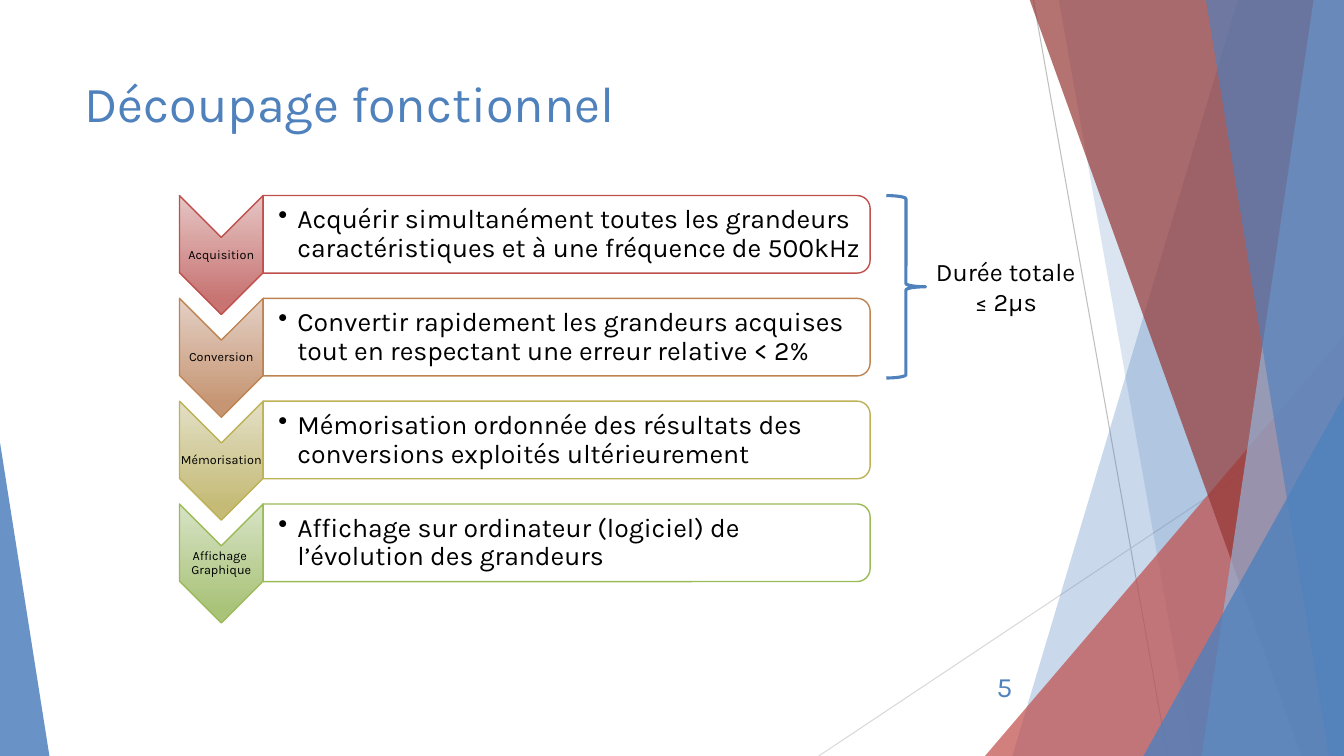
from lxml import etree
from pptx import Presentation
from pptx.dml.color import RGBColor
from pptx.enum import shapes, text
from pptx.oxml import ns
from pptx.util import Inches, Pt

BLUE = RGBColor(0x4F, 0x81, 0xBD)
PALE = RGBColor(0x95, 0xB3, 0xD7)
RED = RGBColor(0xC0, 0x50, 0x4D)
DARK = RGBColor(0x95, 0x37, 0x35)
BLACK = RGBColor(0, 0, 0)
WHITE = RGBColor(0xFF, 0xFF, 0xFF)
SILVER = RGBColor(0xBF, 0xBF, 0xBF)
MIST = RGBColor(0xD9, 0xD9, 0xD9)
FONT = "Karla"
W, H = 13.33, 7.5
KIND = shapes.MSO_SHAPE
MID = text.MSO_ANCHOR.MIDDLE
MEET = text.PP_ALIGN.CENTER

# Content: label, sentence, line colour, gradient start and end
STEPS = [
    ("Acquisition",
     "Acquérir simultanément toutes les grandeurs caractéristiques "
     "et à une fréquence de 500kHz", RED, "E5C5C4", "C77472"),
    ("Conversion",
     "Convertir rapidement les grandeurs acquises tout en respectant "
     "une erreur relative < 2%",
     RGBColor(0xBE, 0x83, 0x51), "E4D0C5", "C69674"),
    ("Mémorisation",
     "Mémorisation ordonnée des résultats des conversions exploités "
     "ultérieurement", RGBColor(0xBD, 0xB2, 0x55), "E3DFC6", "C5BB77"),
    ("Affichage \vGraphique",
     "Affichage sur ordinateur (logiciel) de l’évolution des grandeurs",
     RGBColor(0x9B, 0xBB, 0x59), "D8E3C6", "A9C379"),
]
# Backdrop, back to front: x of the slanted left edge (top, bottom) for a
# band, or box and apex for a triangle; then colour and opacity
RAYS = [((10.25, 0), (11.58, H), SILVER), ((W, 4.03), (8.12, H), MIST)]
DECOR = [
    ((12.28, 10.04), None, BLUE, 30),
    ((10.5, 11.83), None, BLUE, 20),
    ((9.77, 3.33, 3.56, 4.17), 1, RED, 72),
    ((10.21, 12.91), None, DARK, 70),
    ((13.03, 11.92), None, PALE, 70),
    ((11.96, 13.18), None, BLUE, 65),
    ((11.34, 3.93, 1.99, 3.57), 1, BLUE, 80),
    ((0, 4.39, 0.49, 3.11), 0, BLUE, 85),
]

deck = Presentation()
deck.slide_width, deck.slide_height = Inches(W), Inches(H)
slide = deck.slides.add_slide(deck.slide_layouts[6])
parts = slide.shapes


def paint(shape, color, alpha):
    shape.fill.solid()
    shape.fill.fore_color.rgb = color
    clr = shape.fill._xPr.find(".//" + ns.qn("a:srgbClr"))
    etree.SubElement(clr, ns.qn("a:alpha"), val=str(alpha * 1000))


def blend(shape, start, end):
    shape.fill.gradient()
    grad = shape.fill._xPr.find(ns.qn("a:gradFill"))
    grad.set("rotWithShape", "0")
    for kid in list(grad):
        grad.remove(kid)
    stops = etree.SubElement(grad, ns.qn("a:gsLst"))
    for pos, color in ((0, start), (88, end)):
        stop = etree.SubElement(stops, ns.qn("a:gs"), pos=str(pos * 1000))
        etree.SubElement(stop, ns.qn("a:srgbClr"), val=color)
    etree.SubElement(grad, ns.qn("a:lin"), ang="5400000", scaled="0")


def add(kind, left, top, wide, high, line=None, width=1):
    shape = parts.add_shape(kind, *map(Inches, (left, top, wide, high)))
    shape.shadow.inherit = False
    if line is None:
        shape.line.fill.background()
    else:
        shape.line.color.rgb, shape.line.width = line, Pt(width)
    return shape


def turn(kind, left, top, wide, high, line):
    """Add a shape turned a quarter so that it covers the given box."""
    shape = add(kind, left + (wide - high) / 2, top + (high - wide) / 2,
                high, wide, line)
    shape.rotation = 90
    return shape


def write(words, box, size, color=BLACK, align=None, anchor=None,
          inset=None, space=None, bullet=False):
    frame = parts.add_textbox(*map(Inches, box)).text_frame
    frame.word_wrap = True
    frame.vertical_anchor = anchor or text.MSO_ANCHOR.TOP
    if inset is not None:
        frame.margin_left = Inches(inset)
        frame.margin_top = frame.margin_right = Inches(0.01)
        frame.margin_bottom = Inches(0.01)
    para = frame.paragraphs[0]
    para.text = words
    if align:
        para.alignment = align
    if space:
        para.line_spacing = space
    if bullet:
        props = para._p.get_or_add_pPr()
        props.set("marL", str(Inches(0.19)))
        props.set("indent", str(-Inches(0.19)))
        etree.SubElement(props, ns.qn("a:buChar"), char="•")
    para.font.size, para.font.name = Pt(size), FONT
    para.font.color.rgb = color


# Backdrop
for start, end, color in RAYS:
    ray = parts.add_connector(shapes.MSO_CONNECTOR.STRAIGHT,
                              *map(Inches, start + end))
    ray.line.color.rgb, ray.line.width = color, Pt(0.75)
    etree.SubElement(ray._element.spPr, ns.qn("a:effectLst"))
for place, apex, color, alpha in DECOR:
    if apex is None:
        high, low = place
        pen = parts.build_freeform(Inches(high), Inches(-0.01))
        pen.add_line_segments([(Inches(x), Inches(y)) for x, y in
                               ((W, -0.01), (W, H), (low, H))])
        shape = pen.convert_to_shape()
        shape.shadow.inherit = False
        shape.line.fill.background()
    else:
        shape = add(KIND.ISOSCELES_TRIANGLE, *place)
        shape.adjustments[0] = apex
    paint(shape, color, alpha)

# Title
write("Découpage fonctionnel", (0.74, 0.67, 9.4, 1.44), 36, BLUE)

# Steps
LEFT, TOP, STEP, WIDE = 1.78, 1.94, 1.02, 0.83
for i, (label, words, color, start, end) in enumerate(STEPS):
    y = TOP + i * STEP
    blend(turn(KIND.CHEVRON, LEFT, y, WIDE, 1.18, color), start, end)
    write(label, (LEFT, y + 0.41, WIDE, 0.36), 9, align=MEET, anchor=MID,
          inset=0.01, space=0.9)
    bar = turn(KIND.ROUND_2_SAME_RECTANGLE, LEFT + WIDE, y, 6.02, 0.77, color)
    paint(bar, WHITE, 90)
    write(words, (LEFT + WIDE, y + 0.04, 5.99, 0.69), 19, anchor=MID,
          inset=0.15, space=0.9, bullet=True)

# Page number, brace and duration
write("5", (9.39, 6.61, 0.75, 0.4), 20, BLUE, text.PP_ALIGN.RIGHT, MID)
brace = add(KIND.RIGHT_BRACE, 8.79, 1.94, 0.39, 1.81, BLUE, 2.25)
brace.fill.background()
write("Durée totale\v≤ 2µs", (8.99, 2.49, 1.97, 0.71), 18, align=MEET)

deck.save("out.pptx")
